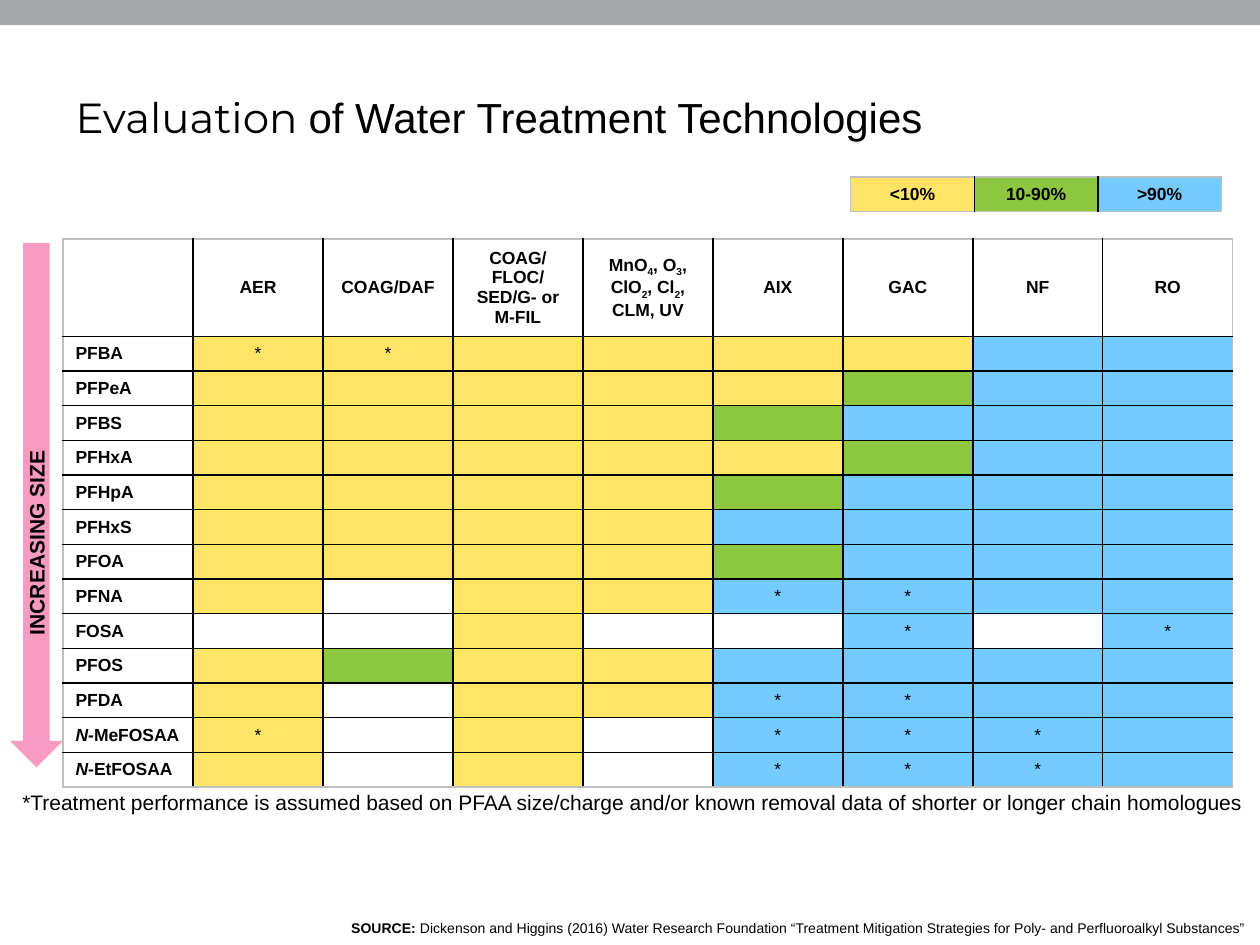
from lxml.etree import SubElement
from pptx import Presentation
from pptx.dml.color import RGBColor
from pptx.enum.shapes import MSO_SHAPE
from pptx.enum.text import MSO_ANCHOR, PP_ALIGN
from pptx.oxml.ns import qn
from pptx.util import Cm, Pt

COLORS = {"black": "000000", "frame": "BFBFBF", "band": "A7A9AC", "arrow": "F99AC0",
          "Y": "FFE466", "G": "8DC63F", "B": "75CAFF"}
TITLE = [("Evaluation ", "montserrat"), ("of Water Treatment Technologies", "")]
LEGEND = [("<10%", "Y"), ("10-90%", "G"), (">90%", "B")]
OXIDANTS = [("MnO", "b"), ("4", "b sub"), (", O", "b"), ("3", "b sub"), (", ClO", "b"),
            ("2", "b sub"), (", Cl", "b"), ("2", "b sub"), (", CLM, UV", "b")]
TECHNOLOGIES = [
    [], [[("AER", "b")]], [[("COAG/DAF", "b")]],
    [[("COAG/", "b")], [("FLOC/SED/G- or M-FIL", "b")]], [OXIDANTS],
    [[("AIX", "b")]], [[("GAC", "b")]], [[("NF", "b")]], [[("RO", "b")]],
]
COMPOUNDS = [
    ([("PFBA", "b")], "Y* Y* Y Y Y Y B B"),
    ([("PFPeA", "b")], "Y Y Y Y Y G B B"),
    ([("PFBS", "b")], "Y Y Y Y G B B B"),
    ([("PFHxA", "b")], "Y Y Y Y Y G B B"),
    ([("PFHpA", "b")], "Y Y Y Y G B B B"),
    ([("PFHxS", "b")], "Y Y Y Y B B B B"),
    ([("PFOA", "b")], "Y Y Y Y G B B B"),
    ([("PFNA", "b")], "Y - Y Y B* B* B B"),
    ([("FOSA", "b")], "- - Y - - B* - B*"),
    ([("PFOS", "b")], "Y G Y Y B B B B"),
    ([("PFDA", "b")], "Y - Y Y B* B* B B"),
    ([("N-", "b i"), ("MeFOSAA", "b")], "Y* - Y - B* B* B* B"),
    ([("N", "b i"), ("-EtFOSAA", "b")], "Y - Y - B* B* B* B"),
]
FOOTNOTE = [("*Treatment performance is assumed based on PFAA size/charge and/or known "
             "removal data of shorter or longer chain homologues", "")]
SOURCE = [("SOURCE: ", "b"),
          ("Dickenson and Higgins (2016) Water Research Foundation “Treatment Mitigation "
           "Strategies for Poly- and Perfluoroalkyl Substances”", "")]
SIZE_LABEL = [("INCREASING SIZE", "b")]


def rgb(name):
    return RGBColor.from_string(COLORS[name])


def write(frame, paragraphs, size, align=PP_ALIGN.LEFT):
    for index, runs in enumerate(paragraphs):
        paragraph = frame.add_paragraph() if index else frame.paragraphs[0]
        paragraph.alignment = align
        for text, style in runs:
            run = paragraph.add_run()
            run.text = text
            font = run.font
            font.size = Pt(size)
            font.name = "Montserrat" if style == "montserrat" else "Arial"
            font.color.rgb = rgb("black")
            marks = style.split()
            font.bold = "b" in marks
            font.italic = "i" in marks
            if "sub" in marks:
                run.font._element.set("baseline", "-25000")


def add_label(slide, box, runs, size, wrap=False):
    label = slide.shapes.add_textbox(*map(Cm, box))
    label.text_frame.word_wrap = wrap
    write(label.text_frame, [runs], size)
    return label


def add_block(slide, kind, box, color):
    block = slide.shapes.add_shape(kind, *map(Cm, box))
    block.shadow.inherit = False
    block.fill.solid()
    block.fill.fore_color.rgb = rgb(color)
    block.line.fill.background()


def draw_borders(cell, edges):
    properties = cell._tc.get_or_add_tcPr()
    for position, (side, outer) in enumerate(edges):
        border = SubElement(properties, qn(f"a:ln{side}"), w="12700")
        fill = SubElement(border, qn("a:solidFill"))
        SubElement(fill, qn("a:srgbClr"), val=COLORS["frame" if outer else "black"])
        properties.insert(position, border)


def add_grid(slide, left, top, column_width, row_heights, rows):
    last_row, last_column = len(rows) - 1, len(rows[0]) - 1
    grid = slide.shapes.add_table(
        len(rows), len(rows[0]), Cm(left), Cm(top),
        Cm(column_width * len(rows[0])), Cm(sum(row_heights))).table
    grid.first_row = grid.horz_banding = False
    for column in grid.columns:
        column.width = Cm(column_width)
    for r, row in enumerate(rows):
        grid.rows[r].height = Cm(row_heights[r])
        for c, (paragraphs, color, align) in enumerate(row):
            cell = grid.cell(r, c)
            cell.vertical_anchor = MSO_ANCHOR.MIDDLE
            if color in COLORS:
                cell.fill.solid()
                cell.fill.fore_color.rgb = rgb(color)
            else:
                cell.fill.background()
            write(cell.text_frame, paragraphs, 10, align)
            if not paragraphs:
                SubElement(cell.text_frame.paragraphs[0]._p, qn("a:endParaRPr"), sz="1000")
            draw_borders(cell, [("L", c == 0), ("R", c == last_column),
                                ("T", r == 0), ("B", r == last_row)])


def removal_cell(code):
    return [[("*", "")]] if code.endswith("*") else [], code[0], PP_ALIGN.CENTER


def main():
    """Build the slide on water treatment technologies."""
    deck = Presentation()
    deck.slide_width, deck.slide_height = Cm(25.4), Cm(19.05)
    slide = deck.slides.add_slide(deck.slide_layouts[5])

    add_block(slide, MSO_SHAPE.RECTANGLE, (0, 0, 25.4, 0.51), "band")

    title = slide.shapes.title
    title.left, title.top, title.width, title.height = map(Cm, (1.27, 0.76, 22.86, 3.18))
    title.text_frame.vertical_anchor = MSO_ANCHOR.MIDDLE
    write(title.text_frame, [TITLE], 24)

    add_label(slide, (6.83, 18.42, 18.75, 0.61), SOURCE, 8)

    header = [(paragraphs, "-", PP_ALIGN.CENTER) for paragraphs in TECHNOLOGIES]
    body = [[([name], "-", PP_ALIGN.LEFT)] + [removal_cell(code) for code in codes.split()]
            for name, codes in COMPOUNDS]
    add_grid(slide, 1.27, 4.82, 2.62, [1.96] + [0.7] * len(body), [header] + body)

    legend = [([[(text, "b")]], color, PP_ALIGN.CENTER) for text, color in LEGEND]
    add_grid(slide, 17.15, 3.57, 2.49, [0.69], [legend])

    add_label(slide, (0.2, 15.8, 25.2, 0.76), FOOTNOTE, 12, wrap=True)
    add_block(slide, MSO_SHAPE.DOWN_ARROW, (0.2, 4.9, 1.07, 10.57), "arrow")
    size_label = add_label(slide, (-1.4, 10.54, 4.27, 0.76), SIZE_LABEL, 12)
    size_label.rotation = 270

    deck.save("out.pptx")


if __name__ == "__main__":
    main()
